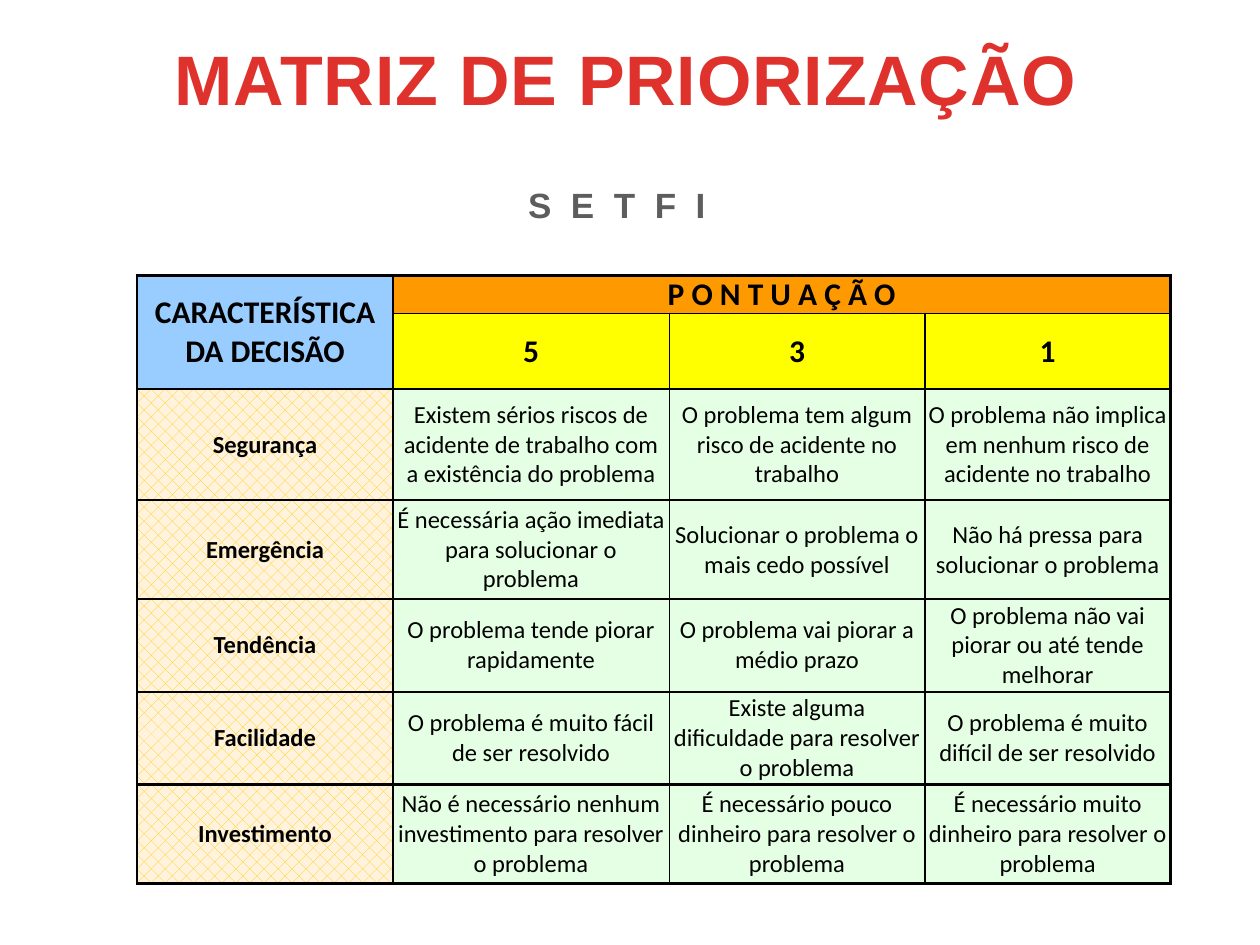
from pptx import Presentation
from pptx.dml.color import RGBColor
from pptx.enum.dml import MSO_PATTERN
from pptx.enum.text import MSO_ANCHOR, MSO_AUTO_SIZE, PP_ALIGN
from pptx.oxml import parse_xml
from pptx.oxml.ns import nsdecls
from pptx.util import Pt

RED = RGBColor(0xE0, 0x32, 0x2D)
GRAY = RGBColor(0x5D, 0x5D, 0x5D)
BLACK = RGBColor(0, 0, 0)
BLUE = RGBColor(0x99, 0xCC, 0xFF)
ORANGE = RGBColor(0xFF, 0x99, 0x00)
YELLOW = RGBColor(0xFF, 0xFF, 0x00)
GREEN = RGBColor(0xE5, 0xFF, 0xE5)
GOLD = RGBColor(0xFF, 0xCC, 0x00)
CREAM = RGBColor(0xFF, 0xF3, 0xDD)

THIN, THICK = 1, 1.5
COL_WIDTHS = [146, 158, 146, 140.5]
ROW_HEIGHTS = [21.6, 43.2, 63.5, 56.5, 53, 53, 56.5]
HEADER_ROWS = 2

ROWS = [
    ["CARACTERÍSTICA DA DECISÃO", "P O N T U A Ç Ã O", "", ""],
    ["", "5", "3", "1"],
    ["Segurança",
     "Existem sérios riscos de acidente de trabalho com a existência do problema",
     "O problema tem algum risco de acidente no trabalho",
     "O problema não implica em nenhum risco de acidente no trabalho"],
    ["Emergência",
     "É necessária ação imediata para solucionar o problema",
     "Solucionar o problema o mais cedo possível",
     "Não há pressa para solucionar o problema"],
    ["Tendência",
     "O problema tende piorar rapidamente",
     "O problema vai piorar a médio prazo",
     "O problema não vai piorar ou até tende melhorar"],
    ["Facilidade",
     "O problema é muito fácil de ser resolvido",
     "Existe alguma dificuldade para resolver o problema",
     "O problema é muito difícil de ser resolvido"],
    ["Investimento",
     "Não é necessário nenhum investimento para resolver o problema",
     "É necessário pouco dinheiro para resolver o problema",
     "É necessário muito dinheiro para resolver o problema"],
]


def style_paragraph(p, font, size, color, bold):
    p.alignment = PP_ALIGN.CENTER
    p.font.name = font
    p.font.size = Pt(size)
    p.font.color.rgb = color
    p.font.bold = bold


def write_heading(sp, text, box, size, color, spacing):
    """Fill a one-line heading; spacing is the gap between letters in points."""
    sp.left, sp.top, sp.width, sp.height = (Pt(v) for v in box)
    tf = sp.text_frame
    tf.word_wrap = False
    tf.auto_size = MSO_AUTO_SIZE.SHAPE_TO_FIT_TEXT
    p = tf.paragraphs[0]
    r = p.add_run()
    r.text = text
    r.font._element.set("spc", str(round(spacing * 100)))
    style_paragraph(p, "Arial", size, color, True)


def set_borders(cell, left, right, top, bottom):
    for side, width in zip("LRTB", (left, right, top, bottom)):
        cell._tc.get_or_add_tcPr().append(parse_xml(
            f'<a:ln{side} {nsdecls("a")} w="{Pt(width)}"><a:solidFill>'
            f'<a:srgbClr val="{BLACK}"/></a:solidFill></a:ln{side}>'))


def fill_cell(cell, row, col):
    if row >= HEADER_ROWS and col == 0:
        cell.fill.patterned()
        cell.fill.pattern = MSO_PATTERN.PERCENT_25
        cell.fill.fore_color.rgb = GOLD
        cell.fill.back_color.rgb = CREAM
        return
    cell.fill.solid()
    if row >= HEADER_ROWS:
        color = GREEN
    elif col == 0:
        color = BLUE
    else:
        color = ORANGE if row == 0 else YELLOW
    cell.fill.fore_color.rgb = color


def format_cell(cell, row, col):
    header = row < HEADER_ROWS
    cell.margin_left = cell.margin_right = Pt(2)
    cell.margin_top = cell.margin_bottom = 0
    cell.vertical_anchor = MSO_ANCHOR.MIDDLE
    cell.text = ROWS[row][col]
    style_paragraph(cell.text_frame.paragraphs[0], "Calibri",
                    18 if header else 14, BLACK, header or col == 0)
    last_col = col + cell.span_width - 1 if cell.is_merge_origin else col
    set_borders(cell,
                left=THICK if col == 0 else THIN,
                right=THICK if last_col == len(COL_WIDTHS) - 1 else THIN,
                top=THICK if row == 0 or row >= 5 else THIN,
                bottom=THICK if row >= 4 else THIN)
    fill_cell(cell, row, col)


def add_matrix(slide):
    table = slide.shapes.add_table(
        len(ROWS), len(COL_WIDTHS), Pt(78.5), Pt(157.5),
        Pt(sum(COL_WIDTHS)), Pt(sum(ROW_HEIGHTS))).table
    table.first_row = table.horz_banding = False
    for column, width in zip(table.columns, COL_WIDTHS):
        column.width = Pt(width)
    for row, height in zip(table.rows, ROW_HEIGHTS):
        row.height = Pt(height)
    table.cell(0, 0).merge(table.cell(1, 0))
    table.cell(0, 1).merge(table.cell(0, 3))
    for row in range(len(ROWS)):
        for col in range(len(COL_WIDTHS)):
            format_cell(table.cell(row, col), row, col)


def main():
    prs = Presentation()
    prs.slide_width, prs.slide_height = Pt(720), Pt(540)
    slide = prs.slides.add_slide(prs.slide_layouts[5])
    write_heading(slide.shapes.title, "MATRIZ DE PRIORIZAÇÃO",
                  (90, 16.5, 535.5, 55.5), 40, RED, 0.5)
    write_heading(slide.shapes.add_textbox(0, 0, 0, 0), "S E T F I",
                  (289, 101.5, 127, 31.5), 20, GRAY, 2.8)
    add_matrix(slide)
    prs.save("out.pptx")


if __name__ == "__main__":
    main()
